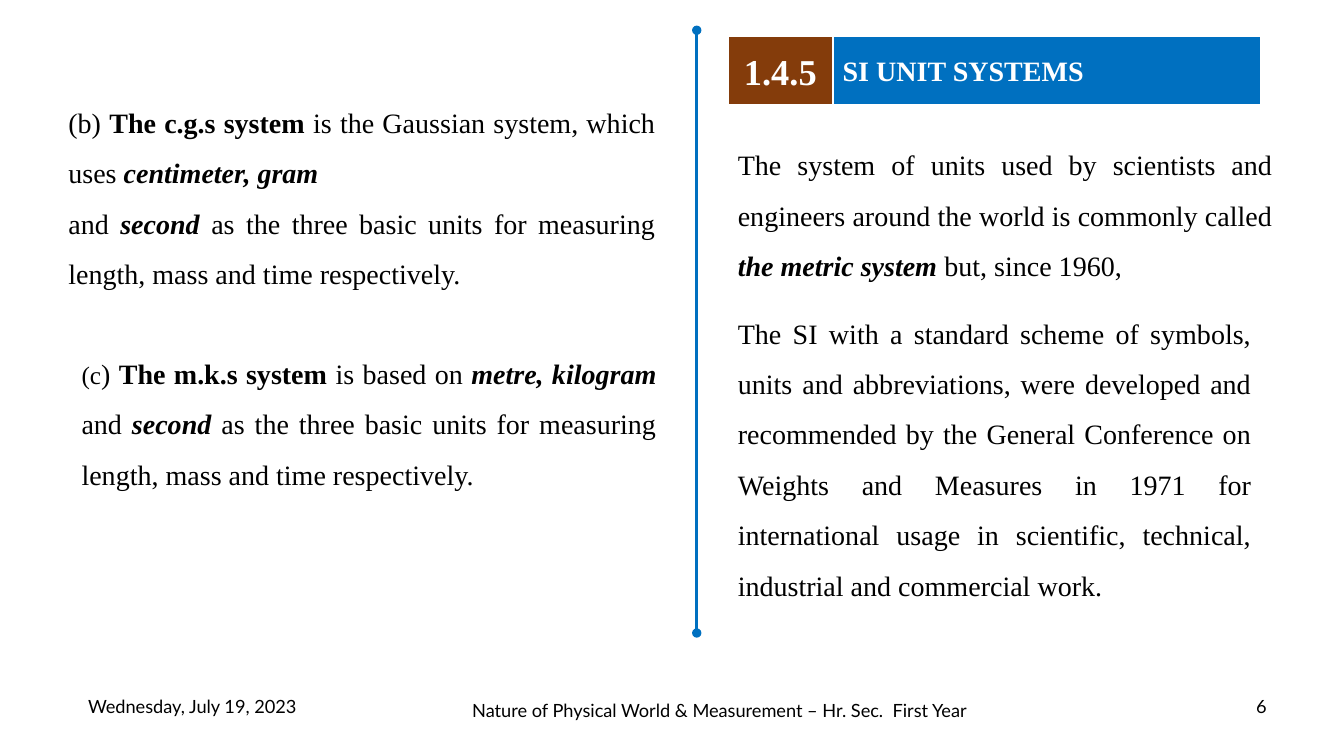
from lxml.etree import SubElement
from pptx import Presentation
from pptx.dml.color import RGBColor
from pptx.enum.shapes import MSO_CONNECTOR, MSO_SHAPE
from pptx.enum.text import MSO_ANCHOR, PP_ALIGN
from pptx.oxml.ns import qn
from pptx.util import Inches, Pt


def rgb(value):
    return RGBColor.from_string(value)


class Page:
    """Holds the style and the current slide; lengths are percentages of the slide."""

    SERIF, SANS = "Times New Roman", "Lato"
    BLACK, WHITE, BLUE, BROWN = "000000", "FFFFFF", "0070C0", "843C0B"

    def __init__(self, prs):
        self.prs = prs
        self.s = prs.slides.add_slide(prs.slide_layouts[6])

    def at(self, *shares):
        sides = (self.prs.slide_width, self.prs.slide_height) * 2
        return [round(side * share / 100) for side, share in zip(sides, shares)]

    def font(self, p, name, size, color, bold=None):
        p.font.name, p.font.size, p.font.bold = name, Pt(size), bold
        p.font.color.rgb = rgb(color)

    def footer(self, box, text):
        tf = self.s.shapes.add_textbox(*self.at(*box)).text_frame
        tf.word_wrap, tf.vertical_anchor = True, MSO_ANCHOR.MIDDLE
        p = tf.paragraphs[0]
        p.text, p.alignment = text, PP_ALIGN.CENTER
        self.font(p, self.SANS, 13, self.BLACK)

    def banner(self, box, text, fill, size, align):
        sp = self.s.shapes.add_shape(MSO_SHAPE.RECTANGLE, *self.at(*box))
        sp.shadow.inherit = False
        sp.fill.solid()
        sp.fill.fore_color.rgb = rgb(fill)
        sp.line.color.rgb, sp.line.width = rgb(self.WHITE), Pt(1.5)
        sp.text_frame.vertical_anchor = MSO_ANCHOR.MIDDLE
        p = sp.text_frame.paragraphs[0]
        p.text, p.alignment = text, align
        self.font(p, self.SERIF, size, self.WHITE, True)

    def body(self, box, *paragraphs, top=0.05):
        tf = self.s.shapes.add_textbox(*self.at(*box)).text_frame
        tf.word_wrap, tf.margin_top = True, Inches(top)
        for i, runs in enumerate(paragraphs):
            p = tf.add_paragraph() if i else tf.paragraphs[0]
            p.alignment, p.line_spacing = PP_ALIGN.JUSTIFY, 1.5
            self.font(p, self.SERIF, 20, self.BLACK)
            for text, style, *size in runs:
                r = p.add_run()
                r.text = text
                if "b" in style:
                    r.font.bold = True
                if "i" in style:
                    r.font.italic = True
                if size:
                    r.font.size = Pt(size[0])

    def divider(self, x, top, bottom):
        ends = self.at(x, top, x, bottom)
        ln = self.s.shapes.add_connector(MSO_CONNECTOR.STRAIGHT, *ends)
        ln.line.color.rgb, ln.line.width = rgb(self.BLUE), Pt(2.25)
        for end in ("a:headEnd", "a:tailEnd"):
            SubElement(ln.line._get_or_add_ln(), qn(end), type="oval")
        SubElement(ln._element.spPr, qn("a:effectLst"))


def main():
    prs = Presentation()
    prs.slide_width, prs.slide_height = Inches(13.33), Inches(7.5)
    page = Page(prs)
    right = 54.16
    units = "as the three basic units for measuring length, mass and time respectively. "

    page.footer((5.33, 90.8, 17.93, 5.33), "Wednesday, July 19, 2023")
    page.footer((92.27, 90.8, 3.15, 5.33), "6")
    page.footer((34.13, 91.33, 38.78, 5.33),
                "Nature of Physical World & Measurement – Hr. Sec.  First Year")
    page.divider(51.84, 4, 83.73)
    page.banner((right, 4.8, 7.8, 9.07), "1.4.5", page.BROWN, 26, PP_ALIGN.CENTER)
    page.banner((right + 7.8, 4.8, 31.88, 9.07), "SI UNIT SYSTEMS", page.BLUE, 20,
                PP_ALIGN.LEFT)

    page.body((4.35, 11.07, 45.16, 28.27),
              [("(b) ", ""), ("The c.g.s system ", "b"),
               ("is the Gaussian system, which uses ", ""),
               ("centimeter, gram ", "bi")],
              [("and ", ""), ("second ", "bi"), (units, "")])
    page.body((5.33, 40.67, 44.26, 31.87),
              [("(c", "", 18), (") ", ""), ("The m.k.s system ", "b"),
               ("is based on ", ""), ("metre, kilogram ", "bi"),
               ("and ", ""), ("second ", "bi"), (units, "")],
              top=0.32)
    page.body((right, 16.67, 41.26, 20.8),
              [("The system of units used by scientists and engineers around the "
                "world is commonly called ", ""),
               ("the metric system ", "bi"), ("but, since 1960, ", "")])
    page.body((right, 38.93, 39.68, 47.73),
              [("The SI with a standard scheme of symbols, units and abbreviations, "
                "were developed and recommended by the General Conference on Weights "
                "and Measures in 1971 for international usage in scientific, "
                "technical, industrial and commercial work. ", "")])
    prs.save("out.pptx")


if __name__ == "__main__":
    main()
